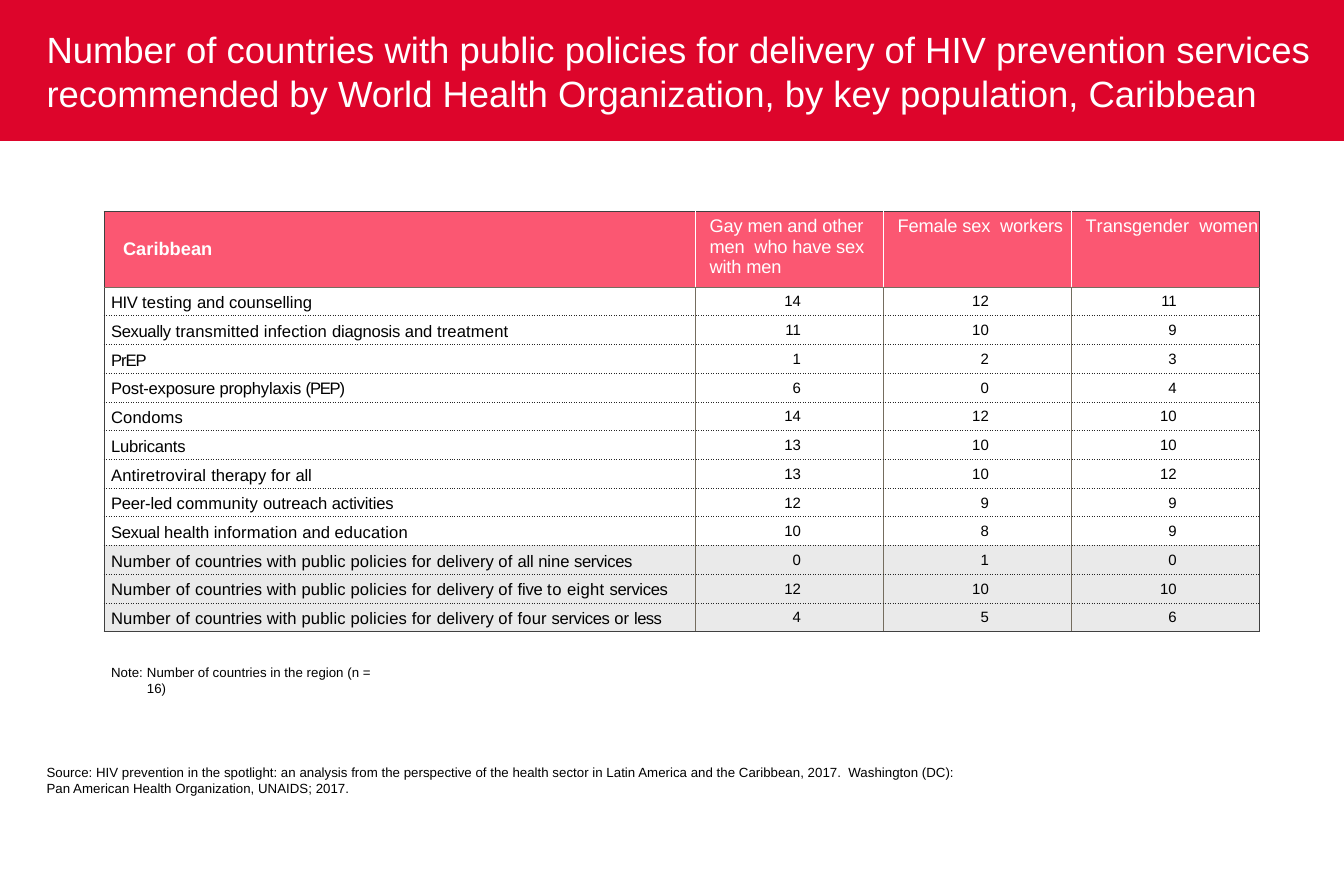
from lxml.etree import SubElement
from pptx import Presentation
from pptx.dml.color import RGBColor
from pptx.enum.shapes import MSO_SHAPE
from pptx.enum.text import MSO_ANCHOR, PP_ALIGN
from pptx.oxml.ns import qn
from pptx.util import Inches, Pt

FONT = "Arial"
RED = RGBColor(0xDD, 0x05, 0x2B)
PINK = RGBColor(0xFB, 0x57, 0x72)
GREY = RGBColor(0xEA, 0xEA, 0xEA)
WHITE = RGBColor(0xFF, 0xFF, 0xFF)
BLACK = RGBColor(0x00, 0x00, 0x00)
FRAME = RGBColor(0x40, 0x40, 0x40)
RULE = RGBColor(0x75, 0x6D, 0x5F)
DOTS = RGBColor(0x26, 0x26, 0x26)

# A border is a colour, a width in points and a dash.
OUTER = (FRAME, 0.5, "solid")
HEAD_SIDE = (WHITE, 0.5, "solid")
THIN = (RULE, 0.25, "solid")
DOTTED = (DOTS, 0.25, "dot")

TITLE = ("Number of countries with public policies for delivery of HIV prevention "
         "services recommended by World Health Organization, by key population, Caribbean")
SOURCE = ("Source: HIV prevention in the spotlight: an analysis from the perspective of the "
          "health sector in Latin America and the Caribbean, 2017.  Washington (DC): "
          "Pan American Health Organization, UNAIDS; 2017.")
NOTE = "Note:\tNumber of countries in the region (n = 16)"

# Each text is a list of runs: wording and letter spacing in points.
HEADINGS = [
    [("Caribbean", 0)],
    [("Gay men and other men  who have sex with men", -0.1)],
    [("Female sex  workers", -0.1)],
    [("T", -0.8), ("ransgender  women", 0)],
]
POLICIES = [("Number ", 0.1), ("of ", 0.2), ("countries ", 0),
            ("with public policies for ", 0.1), ("delivery ", 0), ("of ", 0.2)]
SERVICES = [
    ([("HIV ", -0.2), ("testing ", 0.1), ("and counselling", 0)], (14, 12, 11)),
    ([("Sexually ", -0.2), ("transmitted infection ", 0.1), ("diagnosis ", -0.1),
      ("and ", 0), ("treatment", 0.1)], (11, 10, 9)),
    ([("PrEP", -0.6)], (1, 2, 3)),
    ([("Post-exposure prophylaxis ", -0.1), ("(PEP)", -0.7)], (6, 0, 4)),
    ([("Condoms", 0.1)], (14, 12, 10)),
    ([("Lubricants", -0.1)], (13, 10, 10)),
    ([("Antiretroviral ", 0.1), ("therapy ", 0), ("for ", 0.1), ("all", -0.1)], (13, 10, 12)),
    ([("Peer-led ", -0.1), ("community ", 0.1), ("outreach ", 0), ("activities", -0.1)],
     (12, 9, 9)),
    ([("Sexual ", -0.2), ("health ", 0), ("information ", 0.1), ("and ", 0),
      ("education", 0.1)], (10, 8, 9)),
]
TOTALS = [
    (POLICIES + [("all ", -0.1), ("nine ", 0), ("services", -0.2)], (0, 1, 0)),
    (POLICIES + [("five ", -0.1), ("to ", 0.3), ("eight ", 0.2), ("services", -0.2)],
     (12, 10, 10)),
    (POLICIES + [("four ", 0.1), ("services ", -0.2), ("or ", 0.1), ("less", -0.3)],
     (4, 5, 6)),
]


def add_runs(p, runs, size, color, bold=False):
    for text, spacing in runs:
        r = p.add_run()
        r.text = text
        r.font.name = FONT
        r.font.size = Pt(size)
        r.font.color.rgb = color
        r.font.bold = bold
        if spacing:
            r.font._element.set("spc", str(round(spacing * 100)))


def set_margins(box, left, top, right, bottom):
    box.margin_left, box.margin_top = Inches(left), Inches(top)
    box.margin_right, box.margin_bottom = Inches(right), Inches(bottom)


def set_borders(cell, **borders):
    """Draw the sides L, R, T and B, given in that order."""
    tcPr = cell._tc.get_or_add_tcPr()
    for side, (color, width, dash) in borders.items():
        ln = SubElement(tcPr, qn(f"a:ln{side}"), w=str(Pt(width)))
        fill = SubElement(ln, qn("a:solidFill"))
        SubElement(fill, qn("a:srgbClr"), val=str(color))
        SubElement(ln, qn("a:prstDash"), val=dash)


def add_title_band(s, left, top, width, height):
    band = s.shapes.add_shape(MSO_SHAPE.RECTANGLE, Inches(left), Inches(top),
                              Inches(width), Inches(height))
    band.shadow.inherit = False
    band.fill.solid()
    band.fill.fore_color.rgb = RED
    band.line.fill.background()
    tf = band.text_frame
    tf.word_wrap = True
    tf.vertical_anchor = MSO_ANCHOR.MIDDLE
    set_margins(tf, 0.39, 0.05, 0.1, 0.05)
    p = tf.paragraphs[0]
    p.alignment = PP_ALIGN.LEFT
    add_runs(p, [(TITLE, 0)], 22, WHITE)


def add_small_print(s, text, left, top, width, height, wrap=True, tab=None):
    """Add an 8 point text box, with a hanging indent if a tab is given."""
    box = s.shapes.add_textbox(Inches(left), Inches(top), Inches(width), Inches(height))
    tf = box.text_frame
    tf.word_wrap = wrap
    set_margins(tf, 0, 0, 0, 0)
    p = tf.paragraphs[0]
    if tab:
        pPr = p._p.get_or_add_pPr()
        pPr.set("marL", str(Inches(tab)))
        pPr.set("indent", str(-Inches(tab)))
        stops = SubElement(pPr, qn("a:tabLst"))
        SubElement(stops, qn("a:tab"), pos=str(Inches(tab)), algn="l")
    add_runs(p, [(text, 0)], 8, BLACK)


def fill_heading(cell, runs, first):
    set_margins(cell, 0.16 if first else 0.12, 0.04, 0, 0.04)
    cell.vertical_anchor = MSO_ANCHOR.MIDDLE if first else MSO_ANCHOR.TOP
    add_runs(cell.text_frame.paragraphs[0], runs, 11, WHITE, bold=first)


def fill_label(cell, runs):
    set_margins(cell, 0.06, 0.03, 0, 0)
    cell.vertical_anchor = MSO_ANCHOR.MIDDLE
    add_runs(cell.text_frame.paragraphs[0], runs, 10, BLACK)


def fill_count(cell, count):
    set_margins(cell, 0.01, 0.01, 0.69, 0)
    cell.vertical_anchor = MSO_ANCHOR.MIDDLE
    p = cell.text_frame.paragraphs[0]
    p.alignment = PP_ALIGN.RIGHT
    add_runs(p, [(str(count), 0)], 9, BLACK)


def add_policy_table(s, left, top, width, height):
    body = SERVICES + TOTALS
    last_row, last_col = len(body), len(HEADINGS) - 1
    label_width, head_height = 4.95, 0.63
    table = s.shapes.add_table(last_row + 1, last_col + 1, Inches(left), Inches(top),
                               Inches(width), Inches(height)).table
    table.first_row = table.horz_banding = False
    for i, column in enumerate(table.columns):
        column.width = Inches(label_width if i == 0 else (width - label_width) / last_col)
    for i, row in enumerate(table.rows):
        row.height = Inches(head_height if i == 0 else (height - head_height) / last_row)

    for i in range(last_row + 1):
        side = HEAD_SIDE if i == 0 else THIN
        above = OUTER if i == 0 else THIN if i == 1 else DOTTED
        below = THIN if i == 0 else OUTER if i == last_row else DOTTED
        for j in range(last_col + 1):
            cell = table.cell(i, j)
            set_borders(cell, L=OUTER if j == 0 else side,
                        R=OUTER if j == last_col else side, T=above, B=below)
            if 0 < i <= len(SERVICES):
                cell.fill.background()
            else:
                cell.fill.solid()
                cell.fill.fore_color.rgb = PINK if i == 0 else GREY
            if i == 0:
                fill_heading(cell, HEADINGS[j], first=j == 0)
            elif j == 0:
                fill_label(cell, body[i - 1][0])
            else:
                fill_count(cell, body[i - 1][1][j - 1])


def main():
    prs = Presentation()
    prs.slide_width, prs.slide_height = Inches(11.25), Inches(7.5)
    s = prs.slides.add_slide(prs.slide_layouts[6])
    add_title_band(s, 0, 0, 11.25, 1.18)
    add_policy_table(s, 0.87, 1.77, 9.67, 3.52)
    add_small_print(s, NOTE, 0.93, 5.56, 2.32, 0.12, wrap=False, tab=0.3)
    add_small_print(s, SOURCE, 0.39, 6.4, 7.67, 0.27)
    prs.save("out.pptx")


if __name__ == "__main__":
    main()
